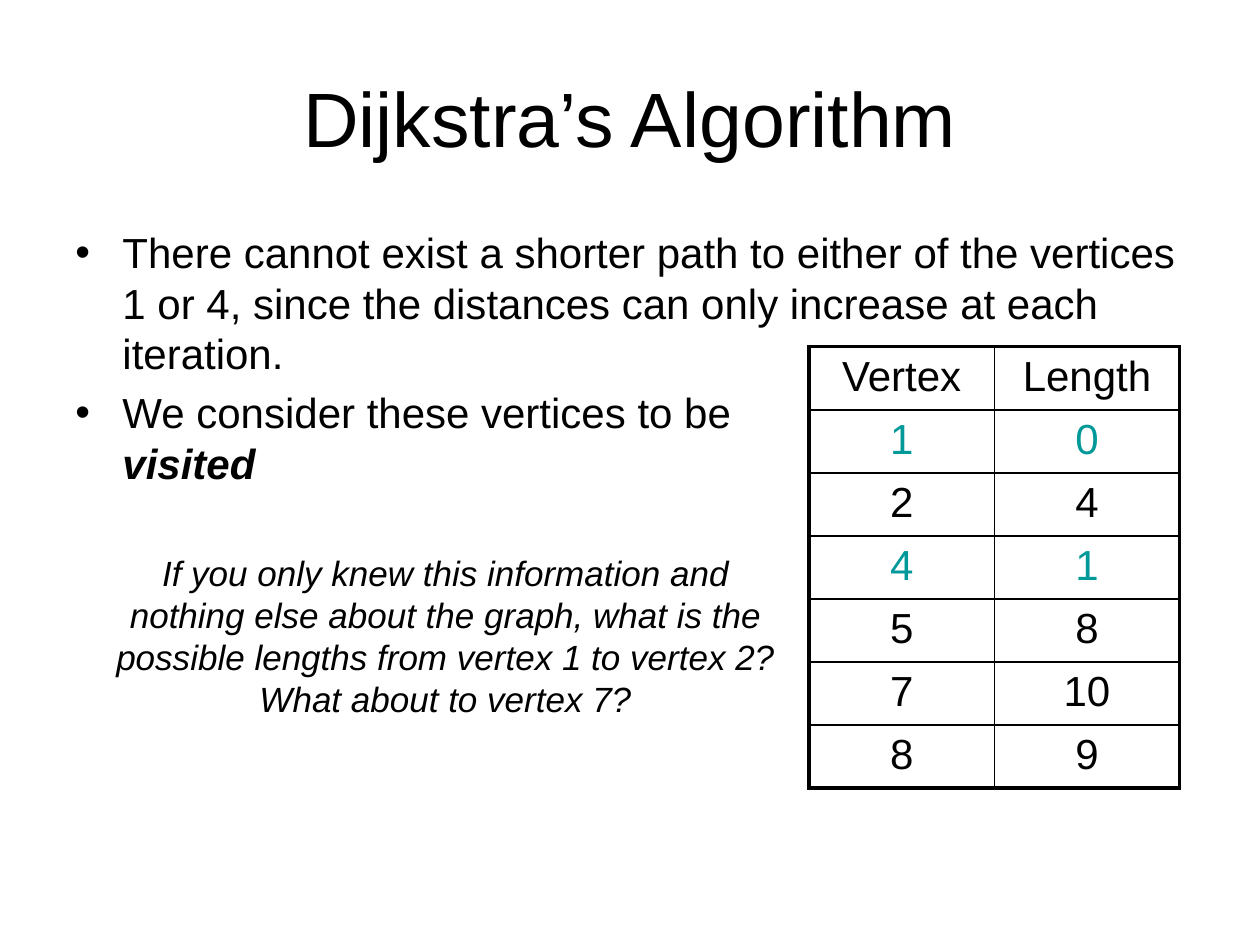
from lxml.etree import SubElement
from pptx import Presentation
from pptx.dml.color import RGBColor
from pptx.enum.text import MSO_ANCHOR as Anchor, PP_ALIGN as Align
from pptx.oxml import parse_xml
from pptx.oxml.ns import nsdecls, qn
from pptx.util import Cm, Pt

BLACK = RGBColor(0x00, 0x00, 0x00)
TEAL = RGBColor(0x00, 0x99, 0x99)
THICK, THIN = 2.25, 1

POINTS = [
    [("There cannot exist a shorter path to either of the vertices 1 or 4, "
      "since the distances can only increase at each iteration.", {})],
    [("We consider these vertices to be \v", {}),
     ("visited", {"bold": True, "italic": True})],
]
ASIDE = ("If you only knew this information and nothing else about the graph, "
         "what is the possible lengths from vertex 1 to vertex 2? "
         "What about to vertex 7?")
HEADS = ("Vertex", "Length")
LENGTHS = {1: 0, 2: 4, 4: 1, 5: 8, 7: 10, 8: 9}
VISITED = {1, 4}


class Deck:
    def __init__(self, font):
        self.font = font
        self.prs = Presentation()
        self.prs.slide_width, self.prs.slide_height = Cm(25.4), Cm(19.05)
        self.slide = self.prs.slides.add_slide(self.prs.slide_layouts[5])

    def text(self, par, words, size, color=BLACK, **extra):
        """Add words to a paragraph; a vertical tab breaks the line."""
        head, *rest = words.split("\v")
        run = par.add_run()
        run.text = head
        style = {"name": self.font, "size": Pt(size), **extra}
        for key, value in style.items():
            setattr(run.font, key, value)
        run.font.color.rgb = color
        for part in rest:
            par.add_line_break()
            if part:
                self.text(par, part, size, color, **extra)

    def title(self, words, *box):
        shape = self.slide.shapes.title
        for key, value in zip(("left", "top", "width", "height"), box):
            setattr(shape, key, Cm(value))
        shape.text_frame.vertical_anchor = Anchor.MIDDLE
        par = shape.text_frame.paragraphs[0]
        par.alignment = Align.CENTER
        self.text(par, words, 44)

    def frame(self, *box):
        frame = self.slide.shapes.add_textbox(*map(Cm, box)).text_frame
        frame.word_wrap = True
        return frame

    def bullets(self, points, *box):
        frame = self.frame(*box)
        for i, runs in enumerate(points):
            par = frame.add_paragraph() if i else frame.paragraphs[0]
            if i:
                par.space_before = Pt(5)
            props = par._p.get_or_add_pPr()
            props.set("marL", str(Cm(0.95)))
            props.set("indent", str(Cm(-0.95)))
            SubElement(props, qn("a:buFont"), typeface=self.font)
            SubElement(props, qn("a:buChar"), char="•")
            for words, extra in runs:
                self.text(par, words, 24, **extra)

    def note(self, words, *box):
        par = self.frame(*box).paragraphs[0]
        par.alignment = Align.CENTER
        self.text(par, words, 20, italic=True)

    def border(self, cell, widths):
        """Draw the left, right, top and bottom lines of a cell."""
        props = cell._tc.get_or_add_tcPr()
        for i, (side, width) in enumerate(zip("LRTB", widths)):
            props.insert(i, parse_xml(
                f'<a:ln{side} {nsdecls("a")} w="{Pt(width)}"><a:solidFill>'
                f'<a:srgbClr val="{BLACK}"/></a:solidFill></a:ln{side}>'))

    def table(self, rows, marked, *box):
        count, cols = len(rows), len(rows[0])
        grid = self.slide.shapes.add_table(count, cols, *map(Cm, box)).table
        grid.first_row = grid.horz_banding = False
        for r, row in enumerate(rows):
            for c, value in enumerate(row):
                cell = grid.cell(r, c)
                cell.fill.background()
                edges = (c == 0, c == cols - 1, r == 0, r == count - 1)
                self.border(cell, [THICK if e else THIN for e in edges])
                par = cell.text_frame.paragraphs[0]
                par.alignment = Align.CENTER
                color = TEAL if row[0] in marked else BLACK
                self.text(par, str(value), 24, color)


def main():
    deck = Deck("Arial")
    deck.title("Dijkstra’s Algorithm", 1.27, 0.76, 22.86, 3.18)
    deck.bullets(POINTS, 1.27, 4.45, 22.86, 12.57)
    deck.table([HEADS, *LENGTHS.items()], VISITED, 16.31, 6.99, 7.47, 8.87)
    deck.note(ASIDE, 1.9, 11, 14.17, 3.68)
    deck.prs.save("out.pptx")


if __name__ == "__main__":
    main()
